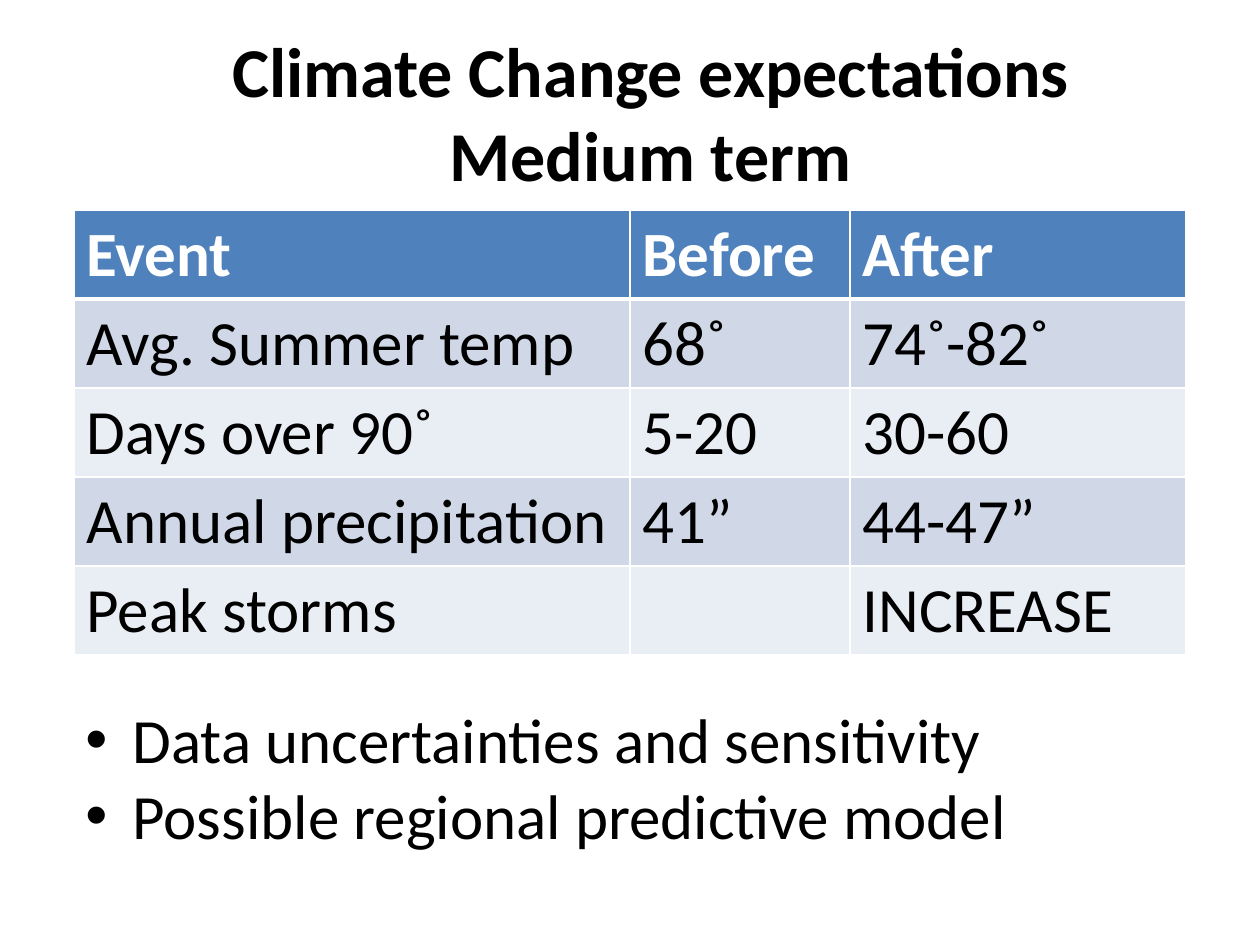
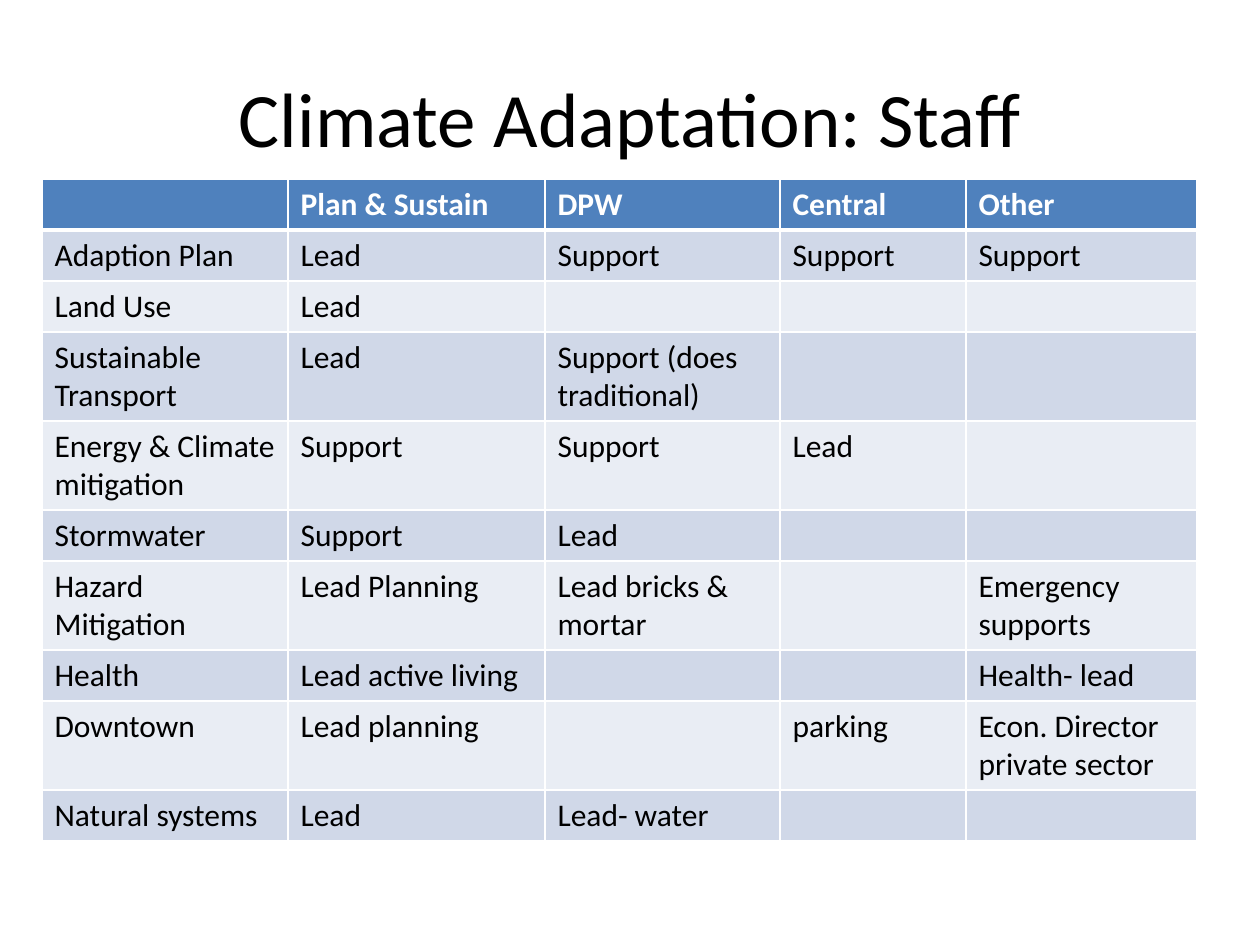
from dataclasses import dataclass

from lxml import etree
from pptx import Presentation
from pptx import util as u
from pptx.dml import color
from pptx.enum import text
from pptx.oxml import ns


@dataclass(frozen=True)
class Theme:
    """Colours, font and type sizes shared by the slides."""
    font: str = "Calibri"
    ink: str = "000000"
    white: str = "FFFFFF"
    header: str = "4F81BD"
    bands: tuple = ("D0D8E8", "E9EDF4")
    title: int = 44
    title_small: int = 40
    large: int = 36
    small: int = 18
    rule: int = 1
    header_rule: int = 3


THEME = Theme()

EXPECTATIONS = [
    ("Event", "Before", "After"),
    ("Avg. Summer temp", "68˚", "74˚-82˚"),
    ("Days over 90˚", "5-20", "30-60"),
    ("Annual precipitation", "41”", "44-47”"),
    ("Peak storms", "", "INCREASE"),
]
CAVEATS = ["Data uncertainties and sensitivity", "Possible regional predictive model"]

STAFF = [
    ("", "Plan & Sustain", "DPW", "Central", "Other"),
    ("Adaption Plan", "Lead", "Support", "Support", "Support"),
    ("Land Use", "Lead", "", "", ""),
    ("Sustainable Transport", "Lead", "Support (does traditional)", "", ""),
    ("Energy & Climate mitigation", "Support", "Support", "Lead", ""),
    ("Stormwater", "Support", "Lead", "", ""),
    ("Hazard Mitigation", "Lead Planning", "Lead bricks & mortar", "", "Emergency supports"),
    ("Health", "Lead active living", "", "", "Health- lead"),
    ("Downtown", "Lead planning", "", "parking", "Econ. Director private sector"),
    ("Natural systems", "Lead", "Lead- water", "", ""),
]
ONE_LINE, TWO_LINES = 51, 89
STAFF_HEIGHTS = [TWO_LINES if row in (3, 4, 6, 8) else ONE_LINE for row in range(len(STAFF))]


def px(length):
    """Turn whole pixels, 126 to the inch, into EMU."""
    return u.Emu(round(length * 914400 / 126))


def add_run(para, words, size, ink=THEME.ink, bold=False):
    """Add one styled run to a paragraph."""
    span = para.add_run()
    span.text = words
    span.font.name = THEME.font
    span.font.size = u.Pt(size)
    span.font.bold = bold
    span.font.color.rgb = color.RGBColor.from_string(ink)


def add_frame(page, box):
    """Add a wrapping text box and return its text frame."""
    frame = page.shapes.add_textbox(*map(px, box)).text_frame
    frame.word_wrap = True
    return frame


def add_title(page, box, lines, size, bold=False):
    """Add a centred title, one run for each line."""
    frame = add_frame(page, box)
    frame.vertical_anchor = text.MSO_ANCHOR.MIDDLE
    para = frame.paragraphs[0]
    para.alignment = text.PP_ALIGN.CENTER
    for number, line in enumerate(lines):
        if number:
            para.add_line_break()
        add_run(para, line, size, bold=bold)


def add_bullets(page, box, items):
    """Add a bulleted list with a hanging indent."""
    frame = add_frame(page, box)
    frame.margin_top = px(18)
    for number, item in enumerate(items):
        para = frame.add_paragraph() if number else frame.paragraphs[0]
        props = para._p.get_or_add_pPr()
        props.set("marL", str(px(47)))
        props.set("indent", str(-px(47)))
        etree.SubElement(props, ns.qn("a:buFont"), typeface="Arial")
        etree.SubElement(props, ns.qn("a:buChar"), char="•")
        add_run(para, item, THEME.large)


def add_borders(cell, row):
    """Draw white cell borders, thicker under the header row."""
    props = cell._tc.get_or_add_tcPr()
    heavy_side = {0: "B", 1: "T"}.get(row)
    for side in "LRTB":
        width = THEME.header_rule if side == heavy_side else THEME.rule
        line = etree.SubElement(props, ns.qn(f"a:ln{side}"), w=str(u.Pt(width)))
        fill = etree.SubElement(line, ns.qn("a:solidFill"))
        etree.SubElement(fill, ns.qn("a:srgbClr"), val=THEME.white)


def add_banded_table(page, corner, widths, heights, rows, size):
    """Add a table with a coloured header and alternating row fills."""
    box = (*corner, sum(widths), sum(heights))
    table = page.shapes.add_table(len(rows), len(widths), *map(px, box)).table
    for column, width in zip(table.columns, widths):
        column.width = px(width)
    for number, (row, height, words) in enumerate(zip(table.rows, heights, rows)):
        row.height = px(height)
        is_header = number == 0
        shade = THEME.header if is_header else THEME.bands[(number - 1) % 2]
        for cell, word in zip(row.cells, words):
            add_borders(cell, number)
            cell.fill.solid()
            cell.fill.fore_color.rgb = color.RGBColor.from_string(shade)
            if word:
                ink = THEME.white if is_header else THEME.ink
                add_run(cell.text_frame.paragraphs[0], word, size, ink, is_header)


def build_expectations(page):
    """Build the medium-term climate expectations slide."""
    add_title(page, (73, 32, 1155, 158), ["Climate Change expectations", "Medium term"],
              THEME.title_small, bold=True)
    add_banded_table(page, (74, 210), [556, 220, 336], [89] * len(EXPECTATIONS),
                     EXPECTATIONS, THEME.large)
    add_bullets(page, (73, 683, 1103, 179), CAVEATS)


def build_staff(page):
    """Build the slide on staff roles in climate adaptation."""
    add_title(page, (63, 38, 1134, 158), ["Climate Adaptation: Staff"], THEME.title)
    add_banded_table(page, (42, 179), [246, 257, 235, 186, 231], STAFF_HEIGHTS,
                     STAFF, THEME.small)


def main():
    """Build and save the deck."""
    deck = Presentation()
    deck.slide_width, deck.slide_height = px(1260), px(945)
    for build in (build_expectations, build_staff):
        build(deck.slides.add_slide(deck.slide_layouts[6]))
    deck.save("out.pptx")


if __name__ == "__main__":
    main()
